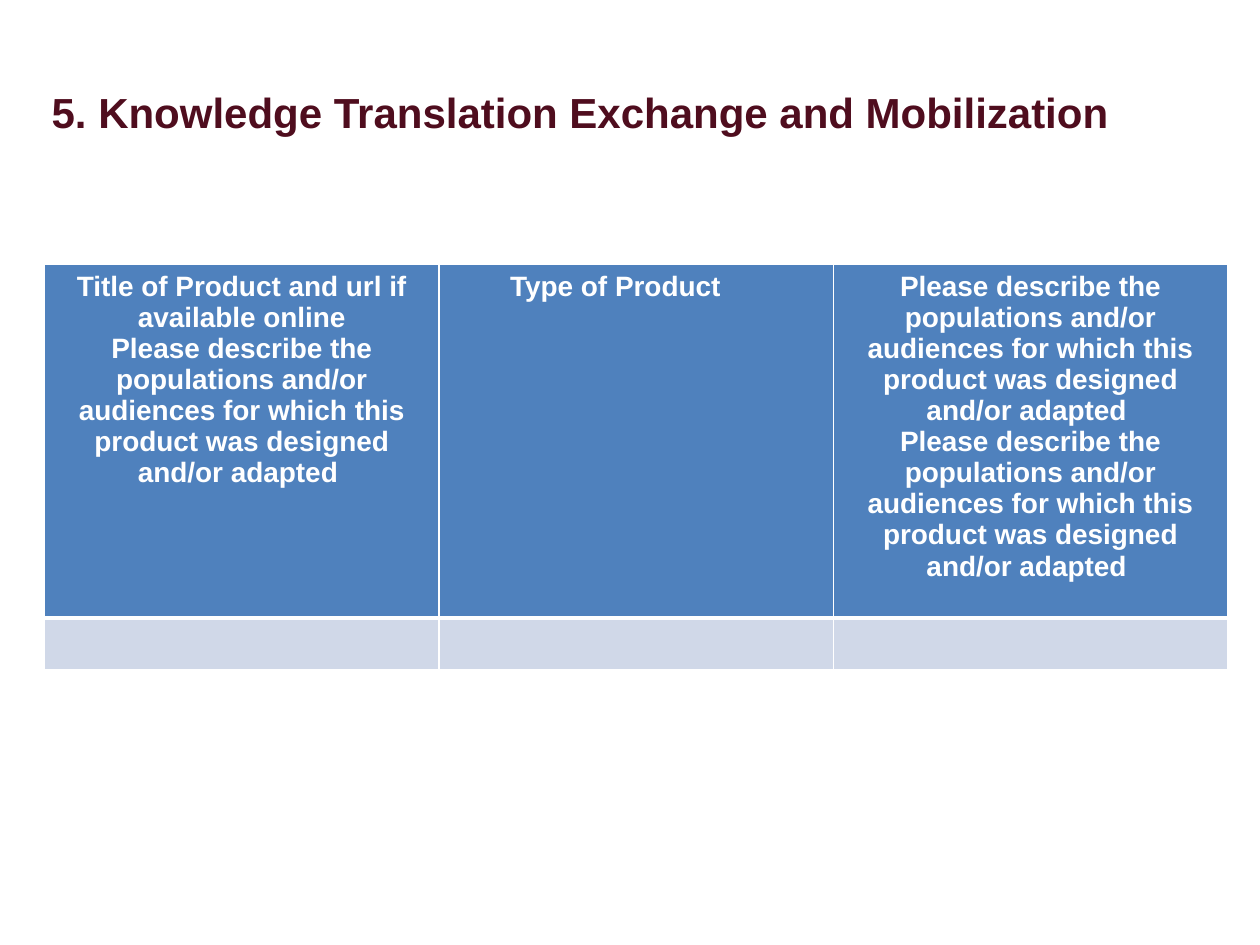
from pptx import Presentation
from pptx.dml.color import RGBColor
from pptx.enum.text import MSO_ANCHOR, MSO_AUTO_SIZE, PP_ALIGN
from pptx.oxml import parse_xml
from pptx.oxml.ns import nsdecls
from pptx.util import Pt

MAROON, WHITE, BLUE, PALE = "4F0D1E", "FFFFFF", "4F81BD", "D0D8E8"
ASK = ("Please describe the populations and/or audiences for which "
       "this product was designed and/or adapted ")
HEADS = [
    ["Title of Product and url if available online", ASK],
    ["Type of Product\t"],
    [ASK, ASK],
]


def color(code):
    return RGBColor.from_string(code)


def add_run(para, text, size, code):
    run = para.add_run()
    run.text = text
    run.font.name = "Arial"
    run.font.size = Pt(size)
    run.font.bold = True
    run.font.color.rgb = color(code)


def add_title(slide, text):
    title = slide.shapes.title
    title.left, title.top = Pt(22.3), Pt(21.6)
    title.width, title.height = Pt(676), Pt(60.5)
    frame = title.text_frame
    frame.auto_size = MSO_AUTO_SIZE.NONE
    frame.word_wrap = True
    frame.vertical_anchor = MSO_ANCHOR.BOTTOM
    para = frame.paragraphs[0]
    para.alignment = PP_ALIGN.LEFT
    add_run(para, text, 24, MAROON)


def paint(cell, code, top, bottom):
    cell.fill.solid()
    cell.fill.fore_color.rgb = color(code)
    props = cell._tc.get_or_add_tcPr()
    # Borders come before the fill, in the order left, right, top, bottom
    sides = zip("LRTB", (1, 1, top, bottom))
    for spot, (side, width) in enumerate(sides):
        props.insert(spot, parse_xml(
            f'<a:ln{side} {nsdecls("a")} w="{Pt(width)}"><a:solidFill>'
            f'<a:srgbClr val="{WHITE}"/></a:solidFill></a:ln{side}>'))


def add_grid(slide, heads):
    frame = slide.shapes.add_table(
        2, len(heads), Pt(25.5), Pt(151.2), Pt(676), Pt(231.5))
    table = frame.table
    table.rows[0].height = Pt(202)
    table.rows[1].height = Pt(29.5)
    for col, lines in enumerate(heads):
        # Heading cell
        head = table.cell(0, col)
        paint(head, BLUE, 1, 3)
        text = head.text_frame
        for row, line in enumerate(lines):
            para = text.add_paragraph() if row else text.paragraphs[0]
            para.alignment = PP_ALIGN.CENTER
            add_run(para, line, 16, WHITE)
        # Blank cell to fill in
        paint(table.cell(1, col), PALE, 3, 1)


def main():
    deck = Presentation()
    deck.slide_width, deck.slide_height = Pt(720), Pt(540)
    slide = deck.slides.add_slide(deck.slide_layouts[5])
    add_title(slide, "5. Knowledge Translation Exchange and Mobilization")
    add_grid(slide, HEADS)
    deck.save("out.pptx")


if __name__ == "__main__":
    main()
